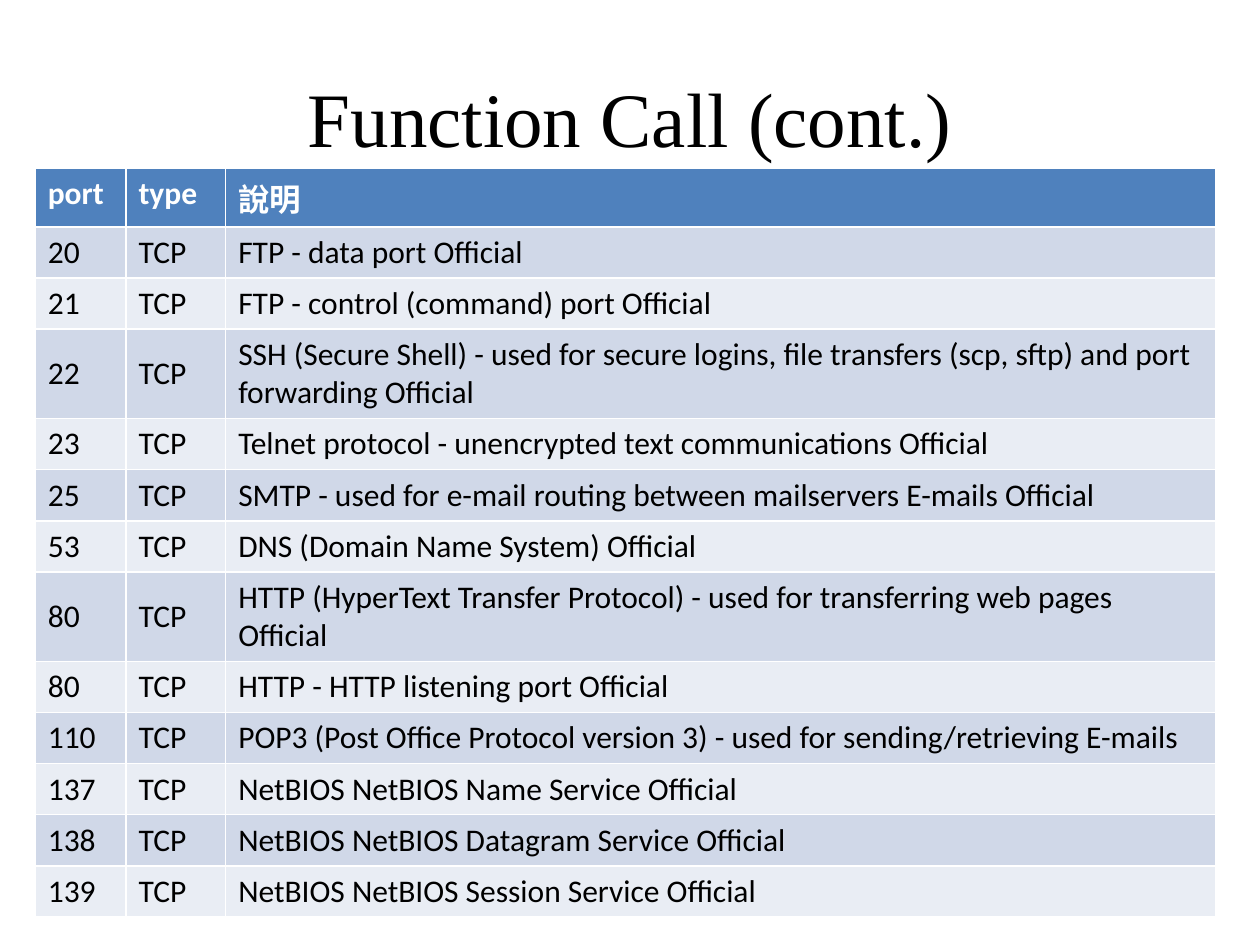
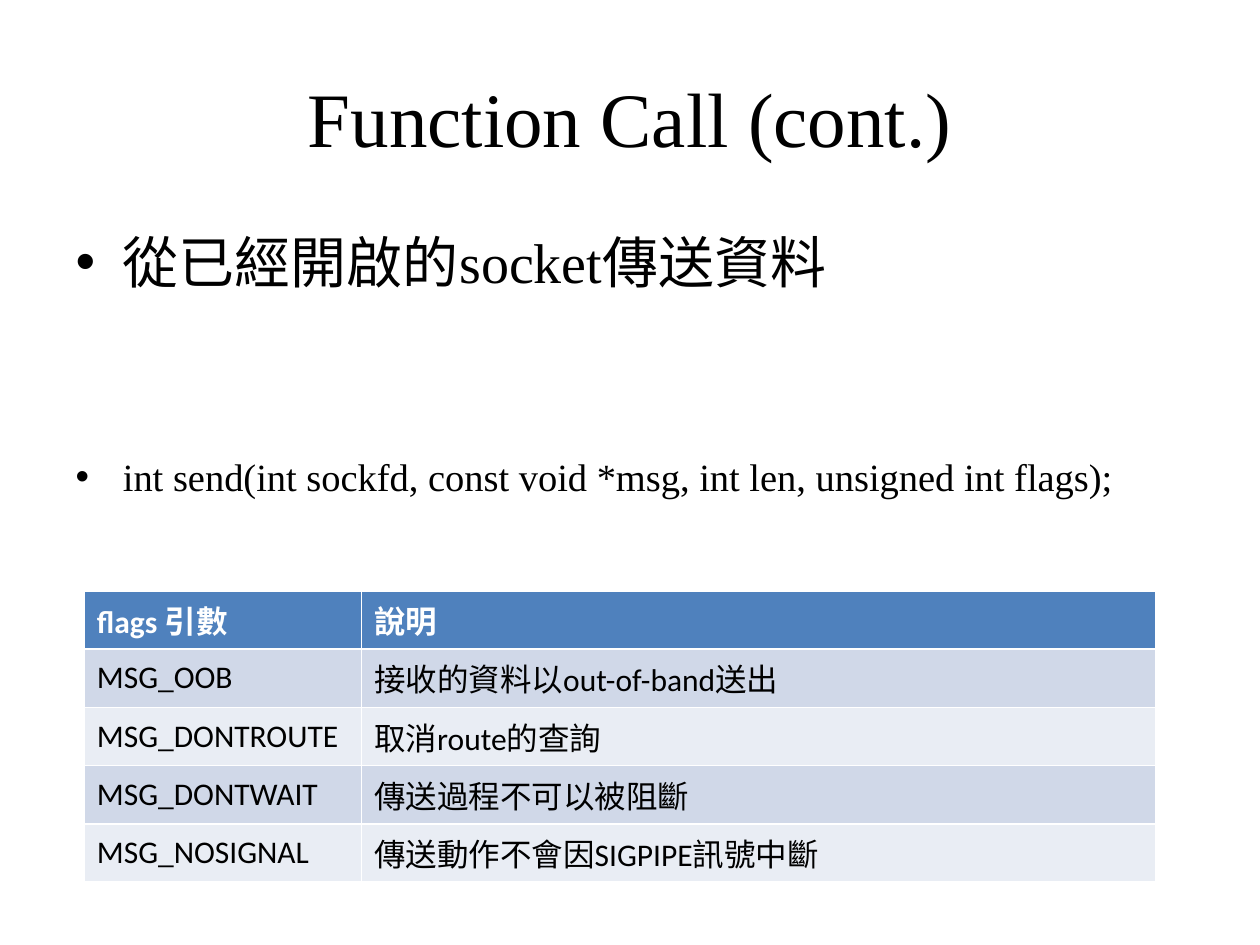
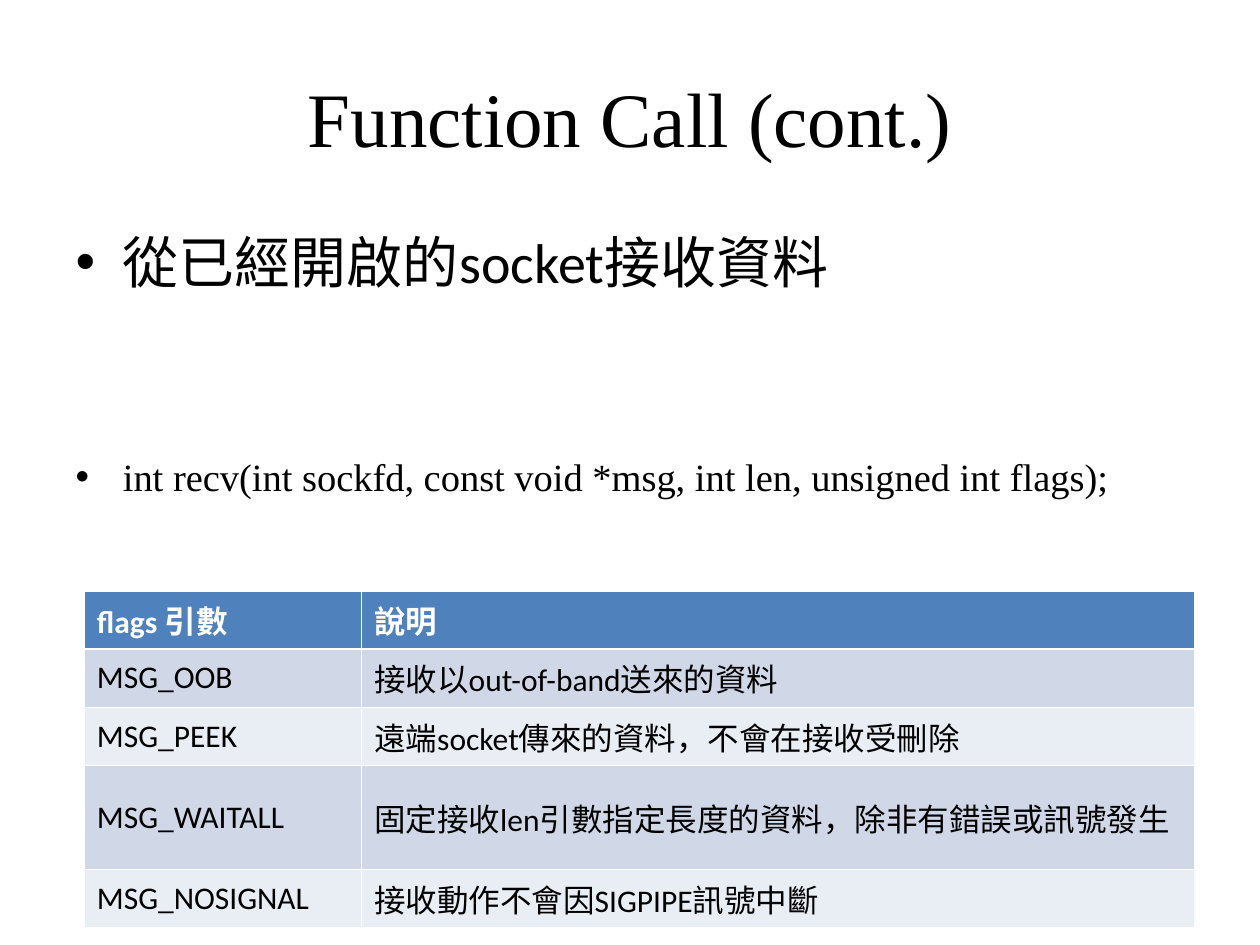
"""Build three slides on socket function calls: common ports, send flags and recv flags."""
from dataclasses import dataclass

from pptx import Presentation
from pptx import util as u
from pptx.dml import color
from pptx.enum import text


@dataclass(frozen=True)
class Theme:
    serif: str = "Times New Roman"
    sans: str = "Calibri"
    black: str = "000000"
    white: str = "FFFFFF"
    header: str = "4F81BD"
    bands: tuple = ("D0D8E8", "E9EDF4")
    title_size: int = 44
    bullet_size: int = 32
    code_size: int = 22
    table_size: int = 18


THEME = Theme()
TITLE = "Function Call (cont.)"
TITLE_BOX = (1.27, 0.76, 22.86, 3.18)
BODY_BOX = (1.27, 4.45, 22.86, 12.57)
ROW_HEIGHT = 1.03
CODE_GAP = 91

PORTS = [
    ("20", "FTP - data port Official"),
    ("21", "FTP - control (command) port Official"),
    ("22", "SSH (Secure Shell) - used for secure logins, file transfers (scp, sftp) "
           "and port forwarding Official"),
    ("23", "Telnet protocol - unencrypted text communications Official"),
    ("25", "SMTP - used for e-mail routing between mailservers E-mails Official"),
    ("53", "DNS (Domain Name System) Official"),
    ("80", "HTTP (HyperText Transfer Protocol) - used for transferring web pages Official"),
    ("80", "HTTP - HTTP listening port Official"),
    ("110", "POP3 (Post Office Protocol version 3) - used for sending/retrieving E-mails"),
    ("137", "NetBIOS NetBIOS Name Service Official"),
    ("138", "NetBIOS NetBIOS Datagram Service Official"),
    ("139", "NetBIOS NetBIOS Session Service Official"),
]
FLAG_HEADER = ("flags 引數", "說明")

SLIDES = [
    {
        "bullets": [],
        "corner": (0.71, 3.4),
        "columns": (1.83, 2.01, 19.96),
        "header_anchor": text.MSO_ANCHOR.TOP,
        "rows": [("port", "type", "說明")]
                + [(port, "TCP", description) for port, description in PORTS],
    },
    {
        "bullets": [
            ("從已經開啟的socket傳送資料", THEME.serif, THEME.bullet_size),
            ("int send(int sockfd, const void *msg, int len, unsigned int flags);",
             THEME.serif, THEME.code_size),
        ],
        "corner": (1.7, 11.91),
        "columns": (5.59, 16),
        "header_anchor": text.MSO_ANCHOR.MIDDLE,
        "rows": [
            FLAG_HEADER,
            ("MSG_OOB", "接收的資料以out-of-band送出"),
            ("MSG_DONTROUTE", "取消route的查詢"),
            ("MSG_DONTWAIT", "傳送過程不可以被阻斷"),
            ("MSG_NOSIGNAL", "傳送動作不會因SIGPIPE訊號中斷"),
        ],
    },
    {
        "bullets": [
            ("從已經開啟的socket接收資料", THEME.sans, THEME.bullet_size),
            ("int recv(int sockfd, const void *msg, int len, unsigned int flags);",
             THEME.serif, THEME.code_size),
        ],
        "corner": (1.7, 11.91),
        "columns": (5.59, 16.8),
        "header_anchor": text.MSO_ANCHOR.MIDDLE,
        "rows": [
            FLAG_HEADER,
            ("MSG_OOB", "接收以out-of-band送來的資料"),
            ("MSG_PEEK", "遠端socket傳來的資料，不會在接收受刪除"),
            ("MSG_WAITALL", "固定接收len引數指定長度的資料，除非有錯誤或訊號發生"),
            ("MSG_NOSIGNAL", "接收動作不會因SIGPIPE訊號中斷"),
        ],
    },
]


def place(shape, box):
    shape.left, shape.top, shape.width, shape.height = map(u.Cm, box)


def format_runs(paragraph, name, size, hue=THEME.black, bold=False):
    for run in paragraph.runs:
        run.font.name = name
        run.font.size = u.Pt(size)
        run.font.bold = bold
        run.font.color.rgb = color.RGBColor.from_string(hue)


def add_title(slide):
    title = slide.shapes.title
    place(title, TITLE_BOX)
    title.text_frame.text = TITLE
    title.text_frame.vertical_anchor = text.MSO_ANCHOR.MIDDLE
    paragraph = title.text_frame.paragraphs[0]
    paragraph.alignment = text.PP_ALIGN.CENTER
    format_runs(paragraph, THEME.serif, THEME.title_size)


def add_bullets(slide, bullets):
    body = slide.placeholders[1]
    place(body, BODY_BOX)
    frame = body.text_frame
    frame.text = "\n".join(wording for wording, _, _ in bullets)
    for paragraph, (_, name, size) in zip(frame.paragraphs, bullets):
        format_runs(paragraph, name, size)
    frame.paragraphs[-1].space_before = u.Pt(CODE_GAP)


def add_grid(slide, rows, columns, corner, header_anchor):
    box = (*corner, sum(columns), ROW_HEIGHT * len(rows))
    table = slide.shapes.add_table(len(rows), len(columns), *map(u.Cm, box)).table
    for column, width in zip(table.columns, columns):
        column.width = u.Cm(width)
    for row_index, row in enumerate(rows):
        is_header = row_index == 0
        fill = THEME.header if is_header else THEME.bands[(row_index - 1) % 2]
        hue = THEME.white if is_header else THEME.black
        for column_index, wording in enumerate(row):
            cell = table.cell(row_index, column_index)
            cell.text_frame.text = wording
            cell.vertical_anchor = header_anchor if is_header else text.MSO_ANCHOR.MIDDLE
            cell.fill.solid()
            cell.fill.fore_color.rgb = color.RGBColor.from_string(fill)
            format_runs(cell.text_frame.paragraphs[0], THEME.sans, THEME.table_size,
                        hue, is_header)


def main():
    presentation = Presentation()
    presentation.slide_width, presentation.slide_height = u.Cm(25.4), u.Cm(19.05)
    title_and_body, title_only = presentation.slide_layouts[1], presentation.slide_layouts[5]
    for content in SLIDES:
        bullets = content["bullets"]
        slide = presentation.slides.add_slide(title_and_body if bullets else title_only)
        add_title(slide)
        if bullets:
            add_bullets(slide, bullets)
        add_grid(slide, content["rows"], content["columns"], content["corner"],
                 content["header_anchor"])
    presentation.save("out.pptx")


if __name__ == "__main__":
    main()
